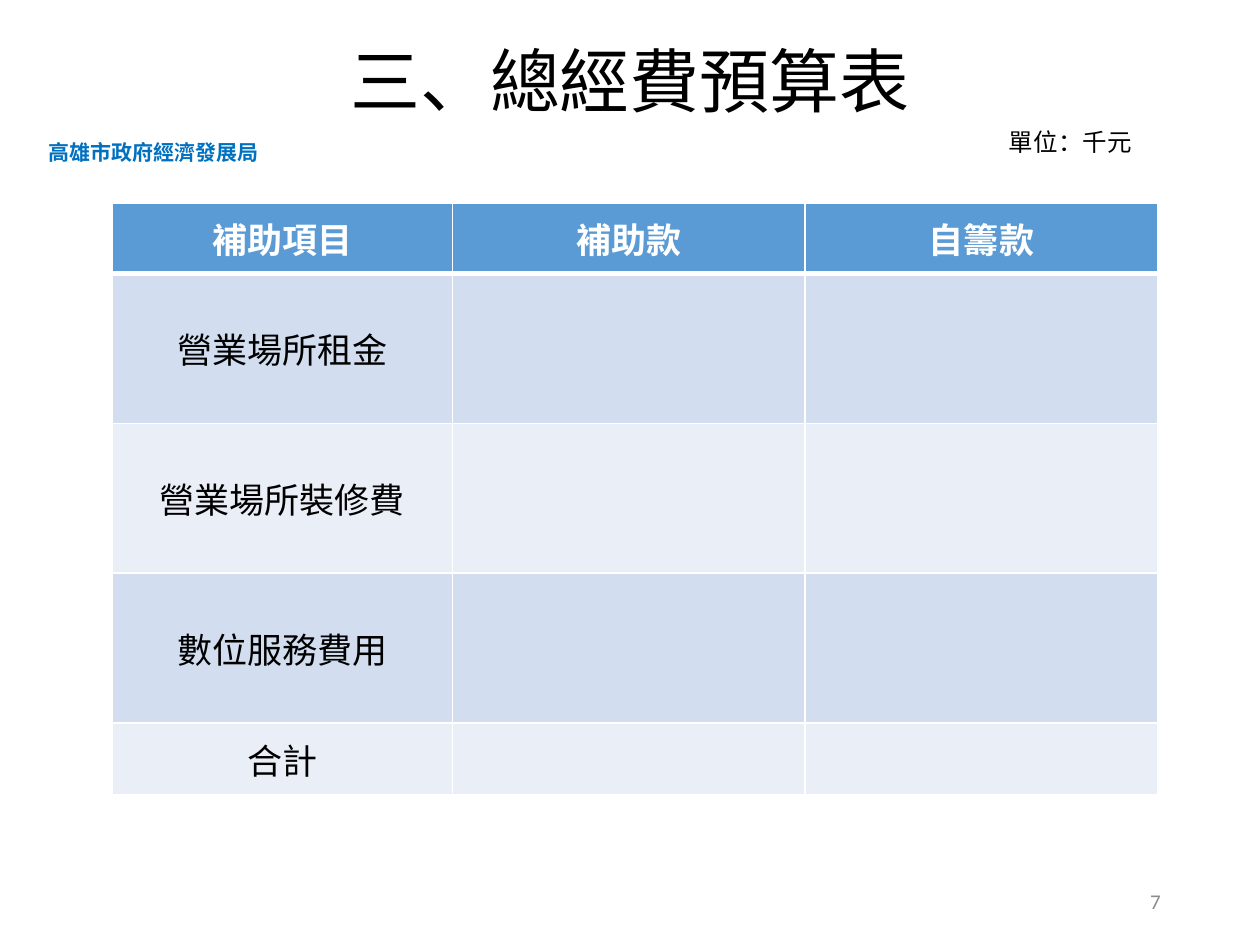
import dataclasses

import lxml.etree
import pptx
import pptx.dml.color
import pptx.enum.text
import pptx.oxml.ns
import pptx.util

SLIDE_WIDTH = 10
SLIDE_HEIGHT = 7.5
CHINESE_FONT = "Noto Sans CJK SC"
ALIGN = pptx.enum.text.PP_ALIGN
ANCHOR = pptx.enum.text.MSO_ANCHOR
HEADER_FILL = "5B9BD5"
BAND_FILLS = ("D2DEEF", "EAEFF7")
COLUMN_WIDTHS = (2.7, 2.8, 2.8)
ROW_HEIGHTS = (0.56, 1.19, 1.19, 1.19, 0.57)
HEADINGS = ("補助項目", "補助款", "自籌款")
ITEMS = ("營業場所租金", "營業場所裝修費", "數位服務費用", "合計")


@dataclasses.dataclass(frozen=True)
class TextStyle:
    size: int
    color: str
    bold: bool = False
    font: str = CHINESE_FONT
    alignment: ALIGN = ALIGN.LEFT


@dataclasses.dataclass(frozen=True)
class Label:
    text: str
    left: float
    top: float
    width: float
    height: float
    style: TextStyle
    anchor: ANCHOR = ANCHOR.TOP
    wrap: bool = True


LABELS = (
    Label("高雄市政府經濟發展局", 0.029, 1.06 / SLIDE_HEIGHT, 0.188, 0.04,
          TextStyle(12, "0070C0", bold=True), wrap=False),
    Label("7", 0.706, 6.95 / SLIDE_HEIGHT, 0.225, 0.4 / SLIDE_HEIGHT,
          TextStyle(12, "8C8C8C", font="Calibri", alignment=ALIGN.RIGHT), ANCHOR.MIDDLE),
    Label("三、總經費預算表", 0.05, 0.13 / SLIDE_HEIGHT, 0.9, 1.01 / SLIDE_HEIGHT,
          TextStyle(40, "000000", alignment=ALIGN.CENTER), ANCHOR.MIDDLE),
    Label("單位：千元", 0.791, 0.96 / SLIDE_HEIGHT, 0.5, 0.34 / SLIDE_HEIGHT,
          TextStyle(14, "000000")),
)
HEADER_STYLE = TextStyle(20, "FFFFFF", bold=True, alignment=ALIGN.CENTER)
BODY_STYLE = TextStyle(20, "000000", alignment=ALIGN.CENTER)


def rgb(color: str) -> pptx.dml.color.RGBColor:
    return pptx.dml.color.RGBColor.from_string(color)


def horizontal(share: float) -> int:
    return pptx.util.Inches(share * SLIDE_WIDTH)


def vertical(share: float) -> int:
    return pptx.util.Inches(share * SLIDE_HEIGHT)


def write_text(paragraph, text: str, style: TextStyle) -> None:
    paragraph.alignment = style.alignment
    run = paragraph.add_run()
    run.text = text
    formats = {"size": pptx.util.Pt(style.size), "bold": style.bold, "name": style.font}
    for name, value in formats.items():
        setattr(run.font, name, value)
    run.font.color.rgb = rgb(style.color)
    east_asian = lxml.etree.SubElement(run.font._element, pptx.oxml.ns.qn("a:ea"))
    east_asian.set("typeface", style.font)


def draw_label(slide, label: Label) -> None:
    shape = slide.shapes.add_textbox(
        horizontal(label.left), vertical(label.top),
        horizontal(label.width), vertical(label.height))
    formats = {"word_wrap": label.wrap, "vertical_anchor": label.anchor}
    for name, value in formats.items():
        setattr(shape.text_frame, name, value)
    write_text(shape.text_frame.paragraphs[0], label.text, label.style)


def draw_borders(cell, top: int, bottom: int) -> None:
    properties = cell._tc.get_or_add_tcPr()
    widths = {"a:lnL": 1, "a:lnR": 1, "a:lnT": top, "a:lnB": bottom}
    for position, (tag, width) in enumerate(widths.items()):
        border = lxml.etree.Element(pptx.oxml.ns.qn(tag), w=str(pptx.util.Pt(width)))
        fill = lxml.etree.SubElement(border, pptx.oxml.ns.qn("a:solidFill"))
        lxml.etree.SubElement(fill, pptx.oxml.ns.qn("a:srgbClr"), val="FFFFFF")
        properties.insert(position, border)


def draw_budget_table(slide) -> None:
    table = slide.shapes.add_table(
        len(ROW_HEIGHTS), len(COLUMN_WIDTHS), horizontal(0.089), vertical(1.61 / SLIDE_HEIGHT),
        pptx.util.Inches(sum(COLUMN_WIDTHS)), pptx.util.Inches(sum(ROW_HEIGHTS))).table
    for column, width in zip(table.columns, COLUMN_WIDTHS):
        column.width = pptx.util.Inches(width)
    for row, height in zip(table.rows, ROW_HEIGHTS):
        row.height = pptx.util.Inches(height)
    contents = (HEADINGS, *((item, "", "") for item in ITEMS))
    for row_index, texts in enumerate(contents):
        header = row_index == 0
        color = HEADER_FILL if header else BAND_FILLS[(row_index - 1) % 2]
        for column_index, text in enumerate(texts):
            cell = table.cell(row_index, column_index)
            cell.fill.solid()
            cell.fill.fore_color.rgb = rgb(color)
            cell.vertical_anchor = ANCHOR.MIDDLE
            draw_borders(cell, 3 if row_index == 1 else 1, 3 if header else 1)
            if text:
                write_text(cell.text_frame.paragraphs[0], text,
                           HEADER_STYLE if header else BODY_STYLE)


def main() -> None:
    presentation = pptx.Presentation()
    presentation.slide_width = horizontal(1)
    presentation.slide_height = vertical(1)
    slide = presentation.slides.add_slide(presentation.slide_layouts[6])
    for label in LABELS:
        draw_label(slide, label)
    draw_budget_table(slide)
    presentation.save("out.pptx")


if __name__ == "__main__":
    main()
